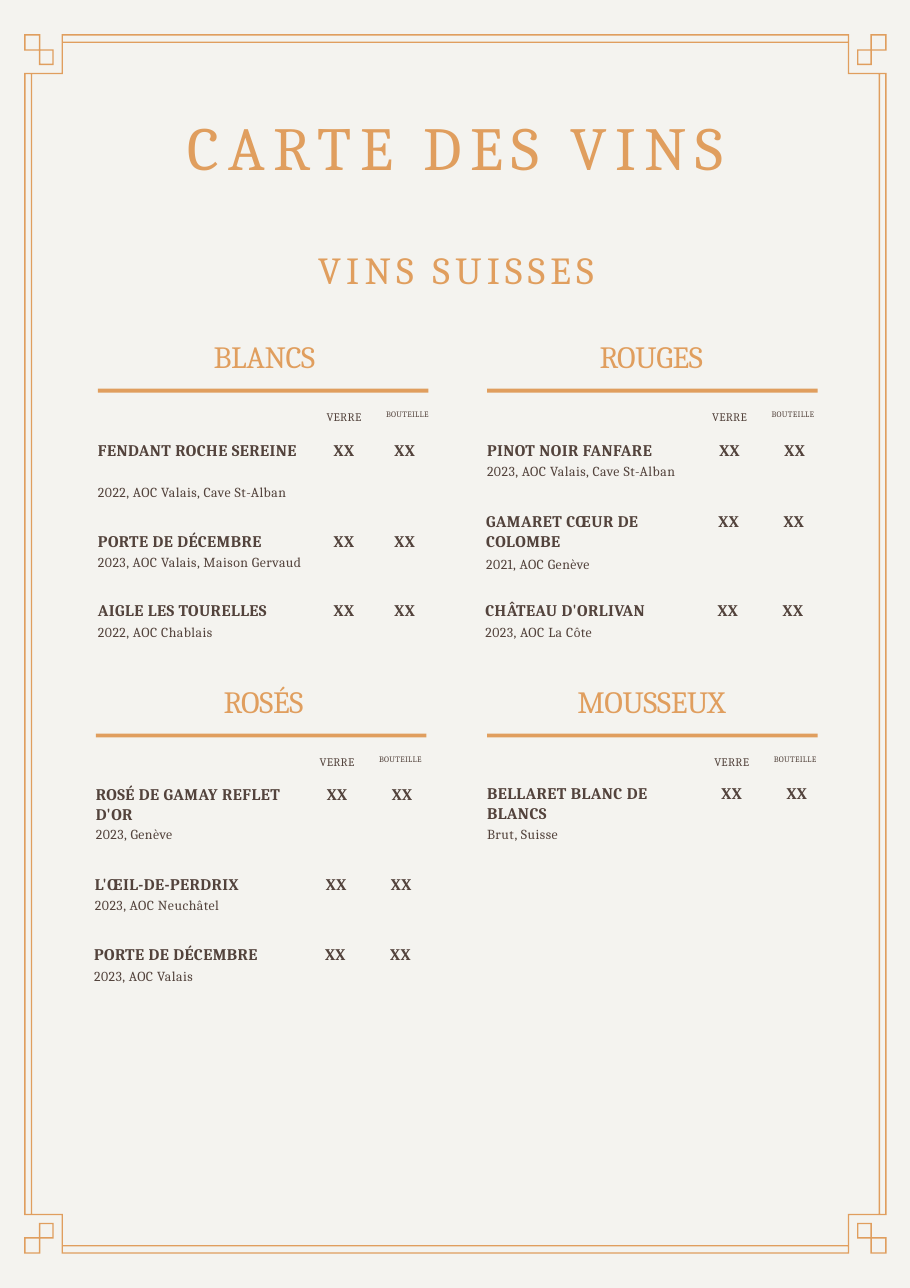
from dataclasses import dataclass

from pptx import Presentation
from pptx.dml.color import RGBColor
from pptx.enum.shapes import MSO_SHAPE
from pptx.enum.text import MSO_AUTO_SIZE, PP_ALIGN
from pptx.util import Cm, Pt


@dataclass(frozen=True)
class Style:
    size: float
    leading: float
    spacing: float
    color: RGBColor
    bold: bool = False


class Theme:
    font = "Cambria"
    paper = RGBColor(0xF4, 0xF3, 0xEF)
    gold = RGBColor(0xE0, 0x9E, 0x5E)
    brown = RGBColor(0x53, 0x43, 0x3C)
    title = Style(40, 43.2, 5.6, gold)
    subtitle = Style(25, 27, 3.5, gold)
    heading = Style(20.2, 25.4, -0.2, gold)
    wine = Style(10.6, 13.3, 0.3, brown, bold=True)
    detail = Style(9, 11.3, 0.3, brown)
    glass = Style(7.6, 10.6, 0.2, brown)
    bottle = Style(5.4, 7.5, 0.2, brown)


@dataclass(frozen=True)
class Wine:
    name: str
    detail: str
    top: float
    detail_top: float
    lines: int = 1


@dataclass(frozen=True)
class Section:
    """One family of wines; drift moves each further row slightly left."""
    heading: str
    top: float
    heading_left: float
    left: float
    glass_left: float
    price_gap: float
    drift: float
    wines: tuple


PAGE_WIDTH, PAGE_HEIGHT = 20.98, 29.69
FRAME_WIDTH = 21.0  # sum of the left and right margins' mirrored positions
HEADING_WIDTH, RULE_WIDTH, RULE_HEIGHT = 7.67, 7.62, 0.09
NAME_WIDTH, DETAIL_WIDTH, PRICE_WIDTH = 4.62, 5.0, 1.22
RULE_OFFSET, LABEL_OFFSET, LABEL_GAP = 1.21, 1.65, 1.46

SECTIONS = (
    Section("BLANCS", 7.75, 2.26, 2.26, 7.32, 1.4, 0, (
        Wine("FENDANT ROCHE SEREINE", "2022, AOC Valais, Cave St-Alban", 10.13, 11.13, 2),
        Wine("PORTE DE DÉCEMBRE", "2023, AOC Valais, Maison Gervaud", 12.22, 12.75),
        Wine("AIGLE LES TOURELLES", "2022, AOC Chablais", 13.82, 14.35))),
    Section("ROUGES", 7.75, 11.18, 11.23, 16.21, 1.5, 0.02, (
        Wine("PINOT NOIR FANFARE", "2023, AOC Valais, Cave St-Alban", 10.13, 10.64),
        Wine("GAMARET CŒUR DE COLOMBE", "2021, AOC Genève", 11.76, 12.8, 2),
        Wine("CHÂTEAU D'ORLIVAN", "2023, AOC La Côte", 13.82, 14.35))),
    Section("ROSÉS", 15.7, 2.24, 2.21, 7.16, 1.5, 0.02, (
        Wine("ROSÉ DE GAMAY REFLET D'OR", "2023, Genève", 18.06, 19.02, 2),
        Wine("L'ŒIL-DE-PERDRIX", "2023, AOC Neuchâtel", 20.14, 20.65),
        Wine("PORTE DE DÉCEMBRE", "2023, AOC Valais", 21.74, 22.28))),
    Section("MOUSSEUX", 15.7, 11.18, 11.23, 16.26, 1.5, 0, (
        Wine("BELLARET BLANC DE BLANCS", "Brut, Suisse", 18.03, 19.02, 2),)),
)


def add_text(page, text, *, left, top, width, style, align=PP_ALIGN.LEFT, lines=1):
    box = page.shapes.add_textbox(Cm(left), Cm(top), Cm(width), Pt(style.leading * lines))
    frame = box.text_frame
    frame.margin_left = frame.margin_top = frame.margin_right = frame.margin_bottom = 0
    frame.word_wrap = True
    frame.auto_size = MSO_AUTO_SIZE.SHAPE_TO_FIT_TEXT
    para = frame.paragraphs[0]
    para.alignment = align
    para.line_spacing = Pt(style.leading)
    span = para.add_run()
    span.text = text
    span.font.name = Theme.font
    span.font.size = Pt(style.size)
    span.font.bold = style.bold
    span.font.color.rgb = style.color
    span._r.get_or_add_rPr().set("spc", str(round(style.spacing * 100)))


def paint_gold(shape):
    shape.shadow.inherit = False
    shape.fill.solid()
    shape.fill.fore_color.rgb = Theme.gold
    shape.line.fill.background()


def rectangle(left, top, right, bottom):
    return [(left, top), (right, top), (right, bottom), (left, bottom)]


def mirror(points, across, down):
    return [(FRAME_WIDTH - x if across else x, PAGE_HEIGHT - y if down else y)
            for x, y in points]


def notched(left, top, notch_x, notch_y):
    """Outline of the page frame with a square step cut into each corner."""
    corner = [(left, notch_y), (notch_x, notch_y), (notch_x, top)]
    return (corner + mirror(corner, True, False)[::-1]
            + mirror(corner, True, True) + mirror(corner, False, True)[::-1])


def frame_contours():
    side = rectangle(0.59, 1.71, 0.71, PAGE_HEIGHT - 1.71)
    edge = rectangle(1.45, 0.82, FRAME_WIDTH - 1.45, 0.96)
    linked_squares = [(0.56, 0.79), (0.93, 0.79), (0.93, 1.14), (1.24, 1.14),
                      (1.24, 1.5), (0.9, 1.5), (0.9, 1.17), (0.56, 1.17)]
    ornament = (linked_squares, rectangle(0.59, 0.82, 0.9, 1.14),
                rectangle(0.93, 1.17, 1.21, 1.47))
    contours = [notched(0.56, 0.79, 1.42, 1.68), notched(0.74, 0.99, 1.45, 1.71),
                side, mirror(side, True, False), edge, mirror(edge, False, True)]
    for across in (False, True):
        for down in (False, True):
            contours += [mirror(part, across, down) for part in ornament]
    return contours


def add_frame(page):
    first, *others = [[(Cm(x), Cm(y)) for x, y in contour] for contour in frame_contours()]
    builder = page.shapes.build_freeform(*first[0])
    builder.add_line_segments(first[1:], close=True)
    for contour in others:
        builder.move_to(*contour[0])
        builder.add_line_segments(contour[1:], close=True)
    paint_gold(builder.convert_to_shape())


def add_rule(page, left, top):
    paint_gold(page.shapes.add_shape(
        MSO_SHAPE.RECTANGLE, Cm(left), Cm(top), Cm(RULE_WIDTH), Cm(RULE_HEIGHT)))


def add_wine(page, wine, left, price_lefts):
    add_text(page, wine.name, left=left, top=wine.top, width=NAME_WIDTH,
             style=Theme.wine, lines=wine.lines)
    add_text(page, wine.detail, left=left, top=wine.detail_top, width=DETAIL_WIDTH,
             style=Theme.detail)
    for price_left in price_lefts:
        add_text(page, "XX", left=price_left, top=wine.top, width=PRICE_WIDTH,
                 style=Theme.wine, align=PP_ALIGN.CENTER)


def add_section(page, section):
    add_text(page, section.heading, left=section.heading_left, top=section.top,
             width=HEADING_WIDTH, style=Theme.heading, align=PP_ALIGN.CENTER)
    add_rule(page, section.left, section.top + RULE_OFFSET)
    labels = (("VERRE", 0, Theme.glass), ("BOUTEILLE", LABEL_GAP, Theme.bottle))
    for label, offset, style in labels:
        add_text(page, label, left=section.glass_left + offset,
                 top=section.top + LABEL_OFFSET, width=PRICE_WIDTH,
                 style=style, align=PP_ALIGN.CENTER)
    for row, wine in enumerate(section.wines):
        shift = row * section.drift
        glass_left = section.glass_left - shift
        add_wine(page, wine, section.left - shift,
                 (glass_left, glass_left + section.price_gap))


def main():
    deck = Presentation()
    deck.slide_width, deck.slide_height = Cm(PAGE_WIDTH), Cm(PAGE_HEIGHT)
    page = deck.slides.add_slide(deck.slide_layouts[6])
    page.background.fill.solid()
    page.background.fill.fore_color.rgb = Theme.paper
    add_frame(page)
    for text, top, style in (("CARTE DES VINS", 2.69, Theme.title),
                             ("VINS SUISSES", 5.79, Theme.subtitle)):
        add_text(page, text, left=2.49, top=top, width=16.05, style=style,
                 align=PP_ALIGN.CENTER)
    for section in SECTIONS:
        add_section(page, section)
    deck.save("out.pptx")


if __name__ == "__main__":
    main()
